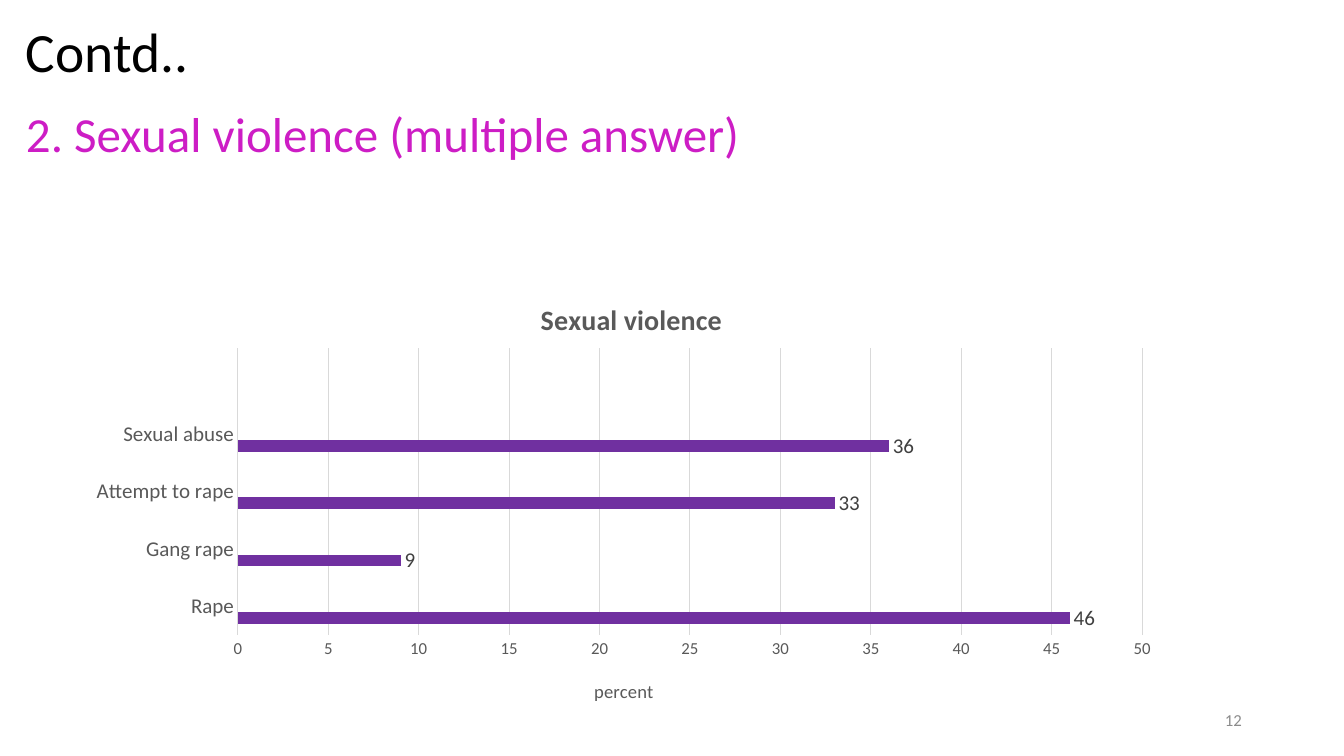
"""Build the sexual violence survey slide with its bar chart."""
from lxml import etree
from pptx import Presentation
from pptx.chart.data import CategoryChartData
from pptx.dml.color import RGBColor
from pptx.enum.chart import XL_CHART_TYPE, XL_LABEL_POSITION, XL_TICK_MARK
from pptx.enum.text import MSO_ANCHOR, PP_ALIGN
from pptx.oxml.ns import qn
from pptx.util import Pt

BAR_CLUSTERED = XL_CHART_TYPE.BAR_CLUSTERED
OUTSIDE_END = XL_LABEL_POSITION.OUTSIDE_END
NO_TICK = XL_TICK_MARK.NONE
TOP, MIDDLE = MSO_ANCHOR.TOP, MSO_ANCHOR.MIDDLE
LEFT, RIGHT = PP_ALIGN.LEFT, PP_ALIGN.RIGHT

BLACK = RGBColor(0x00, 0x00, 0x00)
MAGENTA = RGBColor(0xCD, 0x1D, 0xC5)
PURPLE = RGBColor(0x70, 0x30, 0xA0)
ORANGE = RGBColor(0xED, 0x7D, 0x31)
SILVER = RGBColor(0xA5, 0xA5, 0xA5)
GRID_GRAY = RGBColor(0xD9, 0xD9, 0xD9)
AXIS_GRAY = RGBColor(0x59, 0x59, 0x59)
LABEL_GRAY = RGBColor(0x40, 0x40, 0x40)
NUMBER_GRAY = RGBColor(0x8C, 0x8C, 0x8C)
FONT = "Calibri"

TEXTS = [
    ("Contd..", (11.5, 15.1, 828, 47.5), 39.6, BLACK, MIDDLE, LEFT, 0),
    ("2. Sexual violence (multiple answer)", (11.5, 74.9, 880, 442.8),
     35, MAGENTA, TOP, LEFT, 10),
    ("12", (678.2, 500.4, 216, 28.8), 12, NUMBER_GRAY, MIDDLE, RIGHT, 0),
]
CHART_BOX = (51.8, 194.4, 787.7, 319.7)
CHART_TITLE = "Sexual violence"
AXIS_TITLE = "percent"
CATEGORIES = ["Rape", "Gang rape", "Attempt to rape", "Sexual abuse", ""]
SERIES = [
    ("Series 1", [46, 9, 33, 36, None], PURPLE, 15),
    ("Series 2", [None] * 5, ORANGE, 12),
    ("Series 3", [None] * 5, SILVER, 12),
]


def style(font, size, color, bold=False):
    font.name, font.size, font.bold = FONT, Pt(size), bold
    font.color.rgb = color


def add_text(slide, text, box, size, color, anchor, align, space):
    frame = slide.shapes.add_textbox(*map(Pt, box)).text_frame
    frame.word_wrap = True
    frame.vertical_anchor = anchor
    frame.text = text
    paragraph = frame.paragraphs[0]
    paragraph.alignment = align
    paragraph.line_spacing = 0.9
    paragraph.space_before = Pt(space)
    style(paragraph.runs[0].font, size, color)


def place(element, index, **fractions):
    """Pin a chart part at fractions of the chart area."""
    for previous in element.findall(qn("c:layout")):
        element.remove(previous)
    layout = etree.Element(qn("c:layout"))
    manual = etree.SubElement(layout, qn("c:manualLayout"))
    settings = {"xMode": "edge", "yMode": "edge", **fractions}
    if "w" in fractions:
        settings = {"layoutTarget": "inner", **settings}
    for tag, value in settings.items():
        etree.SubElement(manual, qn(f"c:{tag}")).set("val", str(value))
    element.insert(index, layout)


def add_title(owner, text, size, bold, x, y):
    title = owner.chart_title if hasattr(owner, "chart_title") else owner.axis_title
    title.text_frame.text = text
    style(title.text_frame.paragraphs[0].runs[0].font, size, AXIS_GRAY, bold)
    place(title._element, 1, x=x, y=y)


def add_violence_chart(slide):
    data = CategoryChartData()
    data.categories = CATEGORIES
    for name, values, _, _ in SERIES:
        data.add_series(name, values)
    chart = slide.shapes.add_chart(BAR_CLUSTERED, *map(Pt, CHART_BOX), data).chart
    style(chart.font, 10, BLACK)
    chart.has_legend = False

    category_axis, value_axis = chart.category_axis, chart.value_axis
    for axis, size in ((category_axis, 15), (value_axis, 12)):
        axis.major_tick_mark = axis.minor_tick_mark = NO_TICK
        style(axis.tick_labels.font, size, AXIS_GRAY)
    value_axis.minimum_scale, value_axis.maximum_scale = 0, 50
    value_axis.major_unit = 5
    value_axis.format.line.fill.background()
    value_axis.has_major_gridlines = True
    for line in (category_axis.format.line, value_axis.major_gridlines.format.line):
        line.color.rgb = GRID_GRAY
        line.width = Pt(0.75)

    plot = chart.plots[0]
    plot.gap_width, plot.overlap = 182, 0
    plot.vary_by_categories = False
    for series, (_, _, color, label_size) in zip(plot.series, SERIES):
        series.format.fill.solid()
        series.format.fill.fore_color.rgb = color
        labels = series.data_labels
        labels.show_value = True
        labels.position = OUTSIDE_END
        style(labels.font, label_size, LABEL_GRAY)

    add_title(chart, CHART_TITLE, 20, True, 0.42, 0.05)
    add_title(value_axis, AXIS_TITLE, 13.3, False, 0.47, 0.9)
    plot_area = chart._chartSpace.chart.plotArea
    place(plot_area, 0, x=0.15, y=0.17, w=0.82, h=0.64)


def main():
    deck = Presentation()
    deck.slide_width, deck.slide_height = Pt(960), Pt(540)
    slide = deck.slides.add_slide(deck.slide_layouts[6])
    *headings, page_number = TEXTS
    for heading in headings:
        add_text(slide, *heading)
    add_violence_chart(slide)
    add_text(slide, *page_number)
    deck.save("out.pptx")


if __name__ == "__main__":
    main()
